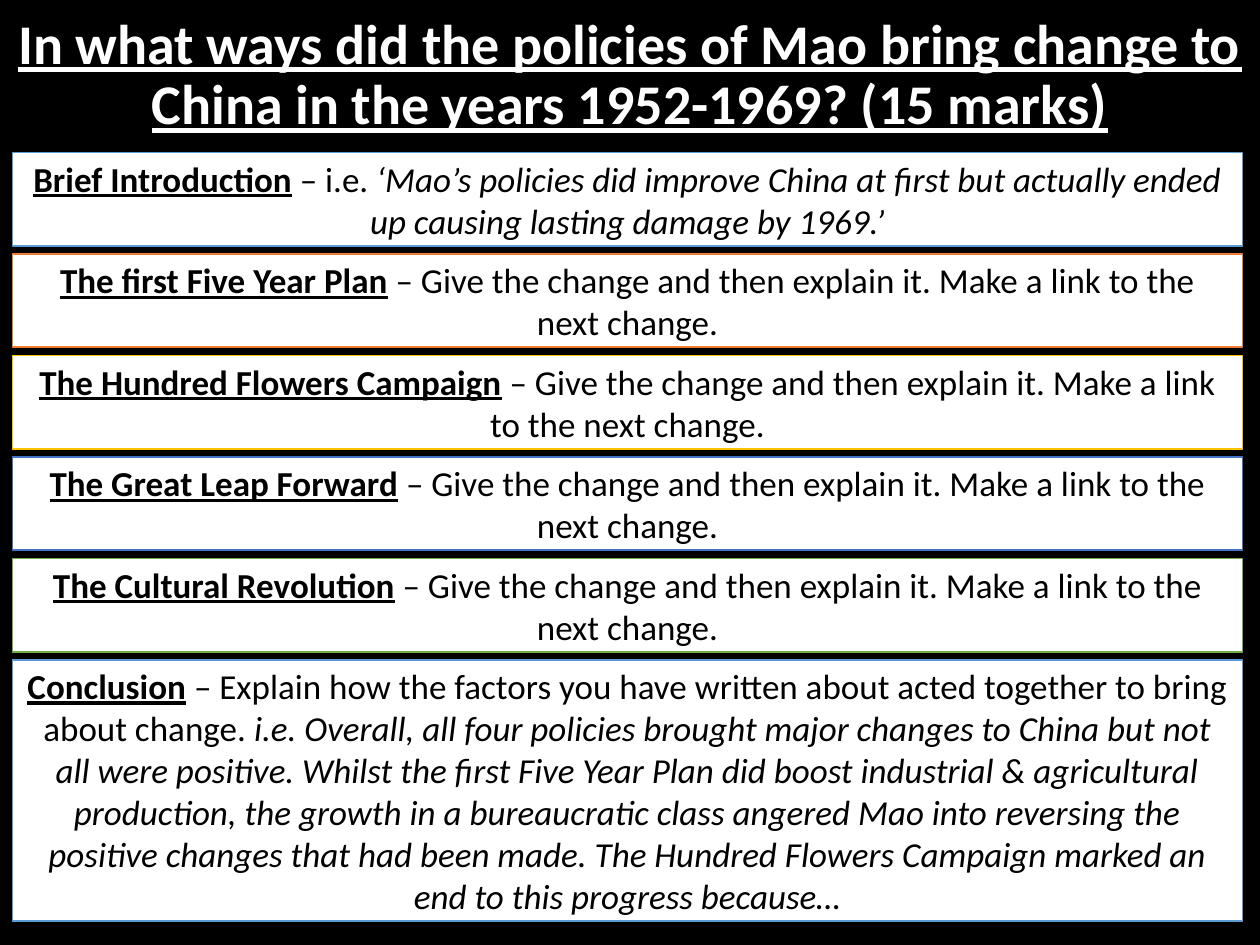
from pptx import Presentation
from pptx.dml.color import RGBColor
from pptx.enum.shapes import MSO_SHAPE
from pptx.enum.text import MSO_ANCHOR, MSO_AUTO_SIZE, PP_ALIGN
from pptx.util import Pt

RECTANGLE = MSO_SHAPE.RECTANGLE
MIDDLE = MSO_ANCHOR.MIDDLE
NO_AUTOFIT = MSO_AUTO_SIZE.NONE
CENTER = PP_ALIGN.CENTER

BLACK = RGBColor(0x00, 0x00, 0x00)
WHITE = RGBColor(0xFF, 0xFF, 0xFF)
SKY = RGBColor(0x5B, 0x9B, 0xD5)
ORANGE = RGBColor(0xED, 0x7D, 0x31)
GOLD = RGBColor(0xFF, 0xC0, 0x00)
BLUE = RGBColor(0x44, 0x72, 0xC4)
GREEN = RGBColor(0x70, 0xAD, 0x47)

SLIDE_WIDTH, SLIDE_HEIGHT = 720, 540
TITLE_HEIGHT = 87.2
BOX_LEFT, BOX_WIDTH = 7.2, 702.8
BOX_HEIGHT, CONCLUSION_HEIGHT = 53.3, 149
BOX_PITCH = 58

QUESTION = ("In what ways did the policies of Mao bring change to China "
            "in the years 1952-1969? (15 marks)")
CHANGE_ADVICE = "– Give the change and then explain it. Make a link to the next change."
INTRODUCTION_EXAMPLE = ("‘Mao’s policies did improve China at first but actually ended up "
                        "causing lasting damage by 1969.’")
CONCLUSION_ADVICE = ("– Explain how the factors you have written about acted together "
                     "to bring about change. ")
CONCLUSION_EXAMPLE = (
    "i.e. Overall, all four policies brought major changes to China but not all were "
    "positive. Whilst the first Five Year Plan did boost industrial & agricultural "
    "production, the growth in a bureaucratic class angered Mao into reversing the "
    "positive changes that had been made. The Hundred Flowers Campaign marked an end "
    "to this progress because…")

# Heading, advice, example in italics, outline colour, height
SECTIONS = [
    ("Brief Introduction", "– i.e. ", INTRODUCTION_EXAMPLE, SKY, BOX_HEIGHT),
    ("The first Five Year Plan", CHANGE_ADVICE, "", ORANGE, BOX_HEIGHT),
    ("The Hundred Flowers Campaign", CHANGE_ADVICE, "", GOLD, BOX_HEIGHT),
    ("The Great Leap Forward", CHANGE_ADVICE, "", BLUE, BOX_HEIGHT),
    ("The Cultural Revolution", CHANGE_ADVICE, "", GREEN, BOX_HEIGHT),
    ("Conclusion", CONCLUSION_ADVICE, CONCLUSION_EXAMPLE, SKY, CONCLUSION_HEIGHT),
]


class EssayPlan:
    font_name = "Calibri"
    title_size = 32
    body_size = 20

    def __init__(self, slide):
        self.slide = slide

    def background(self, color):
        fill = self.slide.background.fill
        fill.solid()
        fill.fore_color.rgb = color

    def style(self, shape, size, color):
        """Centre the text of a shape and return its paragraph."""
        frame = shape.text_frame
        frame.word_wrap = True
        frame.auto_size = NO_AUTOFIT
        frame.vertical_anchor = MIDDLE
        paragraph = frame.paragraphs[0]
        paragraph.alignment = CENTER
        paragraph.font.name = self.font_name
        paragraph.font.size = Pt(size)
        paragraph.font.color.rgb = color
        return paragraph

    def title(self, text):
        question = self.slide.shapes.title
        question.left, question.top = Pt(0), Pt(0)
        question.width, question.height = Pt(SLIDE_WIDTH), Pt(TITLE_HEIGHT)
        question.text_frame.text = text
        paragraph = self.style(question, self.title_size, WHITE)
        paragraph.line_spacing = 0.9
        paragraph.font.bold = True
        paragraph.font.underline = True

    def section(self, top, heading, advice, example, outline, height):
        box = self.slide.shapes.add_shape(
            RECTANGLE, Pt(BOX_LEFT), Pt(top), Pt(BOX_WIDTH), Pt(height))
        box.shadow.inherit = False
        box.fill.solid()
        box.fill.fore_color.rgb = WHITE
        box.line.color.rgb = outline
        box.line.width = Pt(1)

        paragraph = self.style(box, self.body_size, BLACK)
        heading_run = paragraph.add_run()
        heading_run.text = heading
        heading_run.font.bold = True
        heading_run.font.underline = True
        paragraph.add_run().text = " " + advice
        if example:
            example_run = paragraph.add_run()
            example_run.text = example
            example_run.font.italic = True


def main():
    presentation = Presentation()
    presentation.slide_width = Pt(SLIDE_WIDTH)
    presentation.slide_height = Pt(SLIDE_HEIGHT)
    title_only = presentation.slide_layouts[5]
    plan = EssayPlan(presentation.slides.add_slide(title_only))

    # Exam question
    plan.background(BLACK)
    plan.title(QUESTION)

    # Essay sections, stacked below the question
    for row, section in enumerate(SECTIONS):
        plan.section(TITLE_HEIGHT + row * BOX_PITCH, *section)

    presentation.save("out.pptx")


if __name__ == "__main__":
    main()
